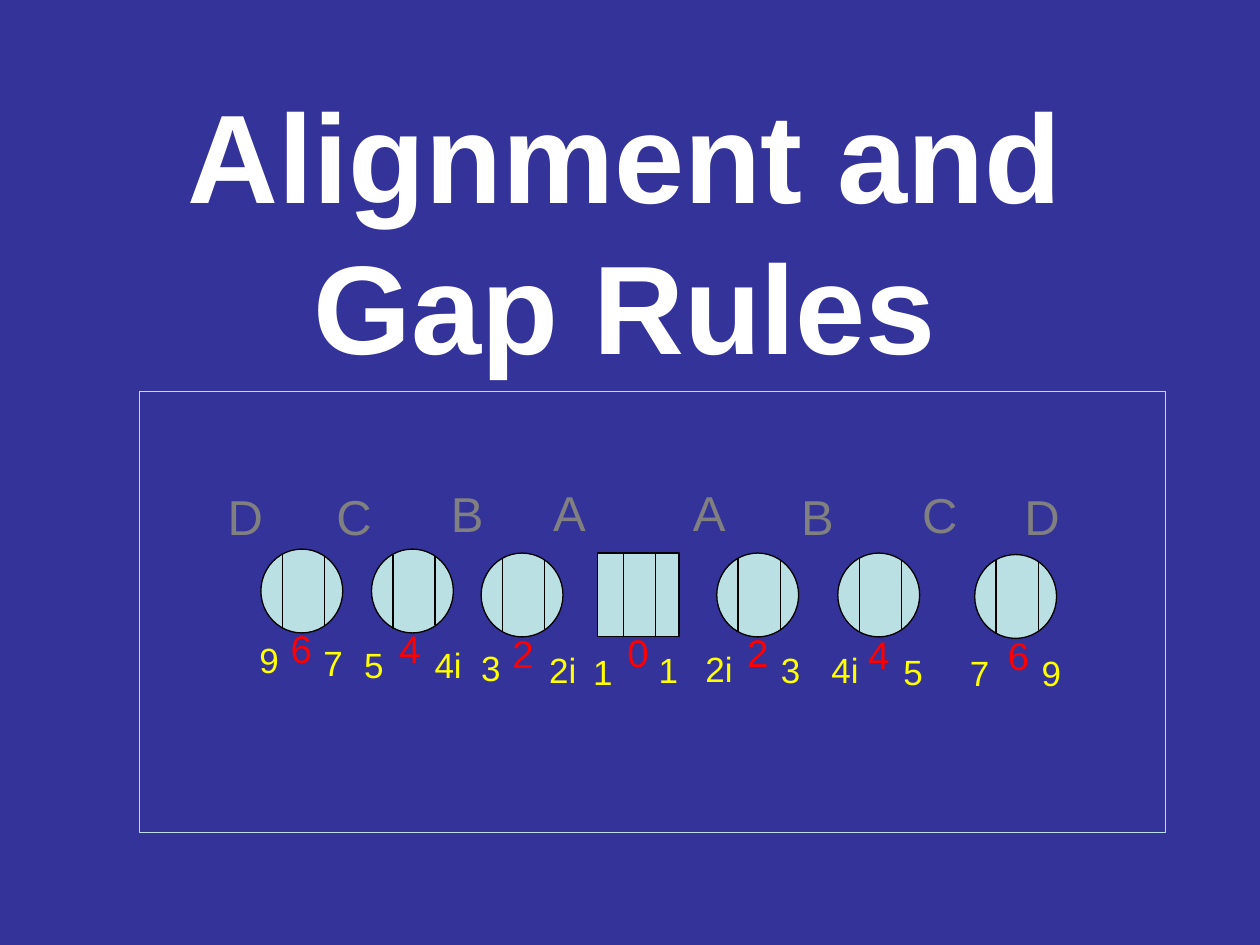
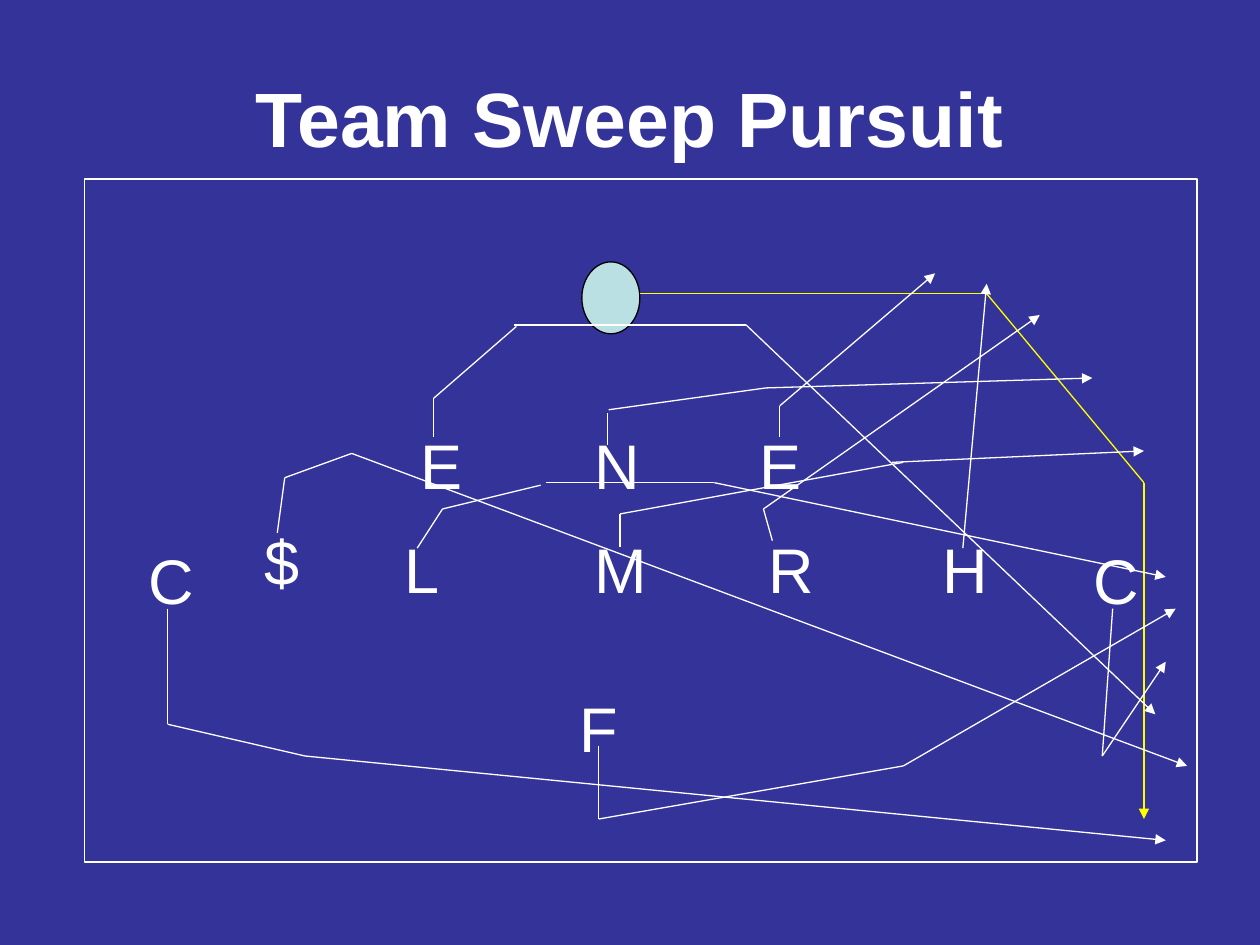
from itertools import pairwise

from lxml import etree
from pptx import Presentation
from pptx.dml.color import RGBColor
from pptx.enum import shapes, text
from pptx.oxml.ns import qn
from pptx.util import Cm, Pt

FONT = "Arial"
NAVY = RGBColor(0x33, 0x33, 0x99)
WHITE = RGBColor(0xFF, 0xFF, 0xFF)
BLACK = RGBColor(0, 0, 0)
PALE = RGBColor(0xBB, 0xE0, 0xE3)
GREY = RGBColor(0x80, 0x80, 0x80)
YELLOW = RGBColor(0xFF, 0xFF, 0)
RED = RGBColor(0xFF, 0, 0)
LINE_WIDTH = Pt(0.75)
OVAL = shapes.MSO_SHAPE.OVAL
RECTANGLE = shapes.MSO_SHAPE.RECTANGLE

# All positions and sizes are in centimetres.
LINEMAN_SIZE = (1.65, 1.69)
LINEMEN = [  # left, top, outline
    (5.26, 11.07, OVAL), (7.49, 11.07, OVAL), (9.7, 11.15, OVAL),
    (12.04, 11.15, RECTANGLE),
    (14.45, 11.15, OVAL), (16.89, 11.15, OVAL), (19.65, 11.18, OVAL),
]
STRIPES = {  # x, start and end, from the lineman's top left corner
    OVAL: [(0.43, 0.11, 1.6), (1.28, 0.13, 1.52)],
    RECTANGLE: [(0.53, 0, 1.69), (1.17, 0, 1.69)],
}
GAPS = [
    ("D", 4.34, 9.68), ("C", 6.53, 9.68), ("B", 8.84, 9.63), ("A", 10.9, 9.6),
    ("A", 13.72, 9.6), ("B", 15.9, 9.68), ("C", 18.34, 9.65), ("D", 20.4, 9.68),
]
SHADES = [  # alignments on a lineman's edges
    ("9", 4.98, 12.75), ("7", 6.27, 12.8), ("5", 7.09, 12.85), ("4i", 8.51, 12.85),
    ("3", 9.45, 12.9), ("2i", 10.82, 12.95), ("1", 11.71, 12.98), ("1", 13.03, 12.95),
    ("2i", 13.97, 12.93), ("3", 15.49, 12.95), ("4i", 16.51, 12.95),
    ("5", 17.96, 12.98), ("7", 19.3, 13), ("9", 20.75, 13),
]
HEAD_UPS = [  # alignments straight over a lineman
    ("6", 5.61, 12.47), ("4", 7.8, 12.47), ("2", 10.08, 12.57), ("0", 12.4, 12.55),
    ("2", 14.81, 12.55), ("4", 17.25, 12.6), ("6", 20.07, 12.62),
]
DEFENDERS = [
    ("E", 8.23, 8.48), ("N", 11.73, 8.48), ("E", 15.06, 8.48),
    ("L", 7.9, 10.57), ("M", 11.73, 10.57), ("R", 15.24, 10.57), ("H", 18.75, 10.57),
    ("$", 5.08, 10.41), ("C", 2.74, 10.8), ("C", 21.79, 10.8), ("F", 11.43, 13.77),
]
STEMS = [  # first steps, without an arrowhead
    [(8.74, 8.81), (8.74, 8.03), (10.41, 6.58)],
    [(12.24, 8.97), (12.24, 8.33)],
    [(8.41, 11.05), (8.92, 10.26), (10.9, 9.78)],
    [(12.5, 11.02), (12.5, 10.36), (18.21, 9.32)],
]
PURSUITS = [  # paths that end in an arrowhead
    [(10.36, 6.55), (15.04, 6.55), (23.29, 14.4)],
    [(12.27, 8.26), (15.44, 7.82), (22.02, 7.62)],
    [(11, 9.73), (14.4, 9.73), (23.5, 11.63)],
    [(17.98, 9.32), (23.06, 9.09)],
    [(15.72, 8.81), (15.72, 8.18), (18.85, 5.51)],
    [(15.57, 10.9), (15.39, 10.26), (20.96, 6.35)],
    [(19.41, 11.05), (19.89, 5.72)],
    [(5.59, 10.74), (5.74, 9.63), (7.09, 9.14), (23.93, 15.44)],
    [(3.38, 12.27), (3.38, 14.6), (6.15, 15.24), (23.5, 16.94)],
    [(22.43, 12.27), (22.22, 15.24), (23.5, 13.34)],
    [(12.07, 15.04), (12.07, 16.51), (18.21, 15.44), (23.7, 12.27)],
]
SWEEP = [(12.9, 5.92), (19.89, 5.92), (23.06, 9.73), (23.06, 16.51)]


def place(left, top, width, height):
    return Cm(left), Cm(top), Cm(width), Cm(height)


def style_run(box, size, color, bold=False):
    font = box.text_frame.paragraphs[0].runs[0].font
    font.name, font.size, font.bold = FONT, Pt(size), bold
    font.color.rgb = color


def add_title(page, words, left, top, size):
    box = page.shapes.add_textbox(*place(left, top, 22.86, 3.18))
    frame = box.text_frame
    frame.word_wrap = True
    frame.vertical_anchor = text.MSO_ANCHOR.MIDDLE
    frame.text = words
    frame.paragraphs[0].alignment = text.PP_ALIGN.CENTER
    style_run(box, size, WHITE, bold=True)


def add_labels(page, labels, width, height, size, color):
    for words, left, top in labels:
        box = page.shapes.add_textbox(*place(left, top, width, height))
        frame = box.text_frame
        frame.word_wrap = True
        frame.auto_size = text.MSO_AUTO_SIZE.SHAPE_TO_FIT_TEXT
        frame.text = words
        properties = frame.paragraphs[0]._p.get_or_add_pPr()
        before = etree.SubElement(properties, qn("a:spcBef"))
        etree.SubElement(before, qn("a:spcPct")).set("val", "50000")
        style_run(box, size, color)


def add_outline(page, kind, area, line, fill=None):
    shape = page.shapes.add_shape(kind, *place(*area))
    shape.shadow.inherit = False
    if fill is None:
        shape.fill.background()
    else:
        shape.fill.solid()
        shape.fill.fore_color.rgb = fill
    shape.line.color.rgb = line
    shape.line.width = LINE_WIDTH


def add_route(page, points, color, arrow=False):
    """Join the points with straight lines, the last one with an optional arrowhead."""
    for start, end in pairwise(points):
        line = page.shapes.add_connector(
            shapes.MSO_CONNECTOR.STRAIGHT, *place(*start, *end))
        line.line.color.rgb = color
        line.line.width = LINE_WIDTH
        if arrow and end == points[-1]:
            tail = etree.SubElement(line.line._get_or_add_ln(), qn("a:tailEnd"))
            tail.set("type", "triangle")
        etree.SubElement(line._element.spPr, qn("a:effectLst"))


def add_page(deck):
    return deck.slides.add_slide(deck.slide_layouts[6])


def build_alignment(page):
    add_title(page, "Alignment and Gap Rules", 1.17, 3.02, 72)
    for left, top, kind in LINEMEN:
        add_outline(page, kind, (left, top, *LINEMAN_SIZE), BLACK, PALE)
        for x, start, end in STRIPES[kind]:
            add_route(page, [(left + x, top + start), (left + x, top + end)], BLACK)
    add_labels(page, GAPS, 1.19, 1.45, 28, GREY)
    add_labels(page, SHADES, 1.2, 1.09, 20, YELLOW)
    add_labels(page, HEAD_UPS, 1.2, 1.19, 22, RED)
    add_outline(page, RECTANGLE, (2.82, 7.9, 20.68, 8.89), PALE)


def build_pursuit(page):
    add_title(page, "Team Sweep Pursuit", 1.27, 0.76, 44)
    add_labels(page, DEFENDERS, 1.17, 1.78, 36, WHITE)
    add_outline(page, OVAL, (11.73, 5.28, 1.17, 1.45), BLACK, PALE)
    add_outline(page, RECTANGLE, (1.7, 3.61, 22.43, 13.77), WHITE)
    add_route(page, SWEEP, YELLOW, arrow=True)
    for stem in STEMS:
        add_route(page, stem, WHITE)
    for pursuit in PURSUITS:
        add_route(page, pursuit, WHITE, arrow=True)


def main():
    deck = Presentation()
    deck.slide_width, deck.slide_height = Cm(25.4), Cm(19.05)
    background = deck.slide_master.background.fill
    background.solid()
    background.fore_color.rgb = NAVY
    build_alignment(add_page(deck))
    build_pursuit(add_page(deck))
    deck.save("out.pptx")


if __name__ == "__main__":
    main()
